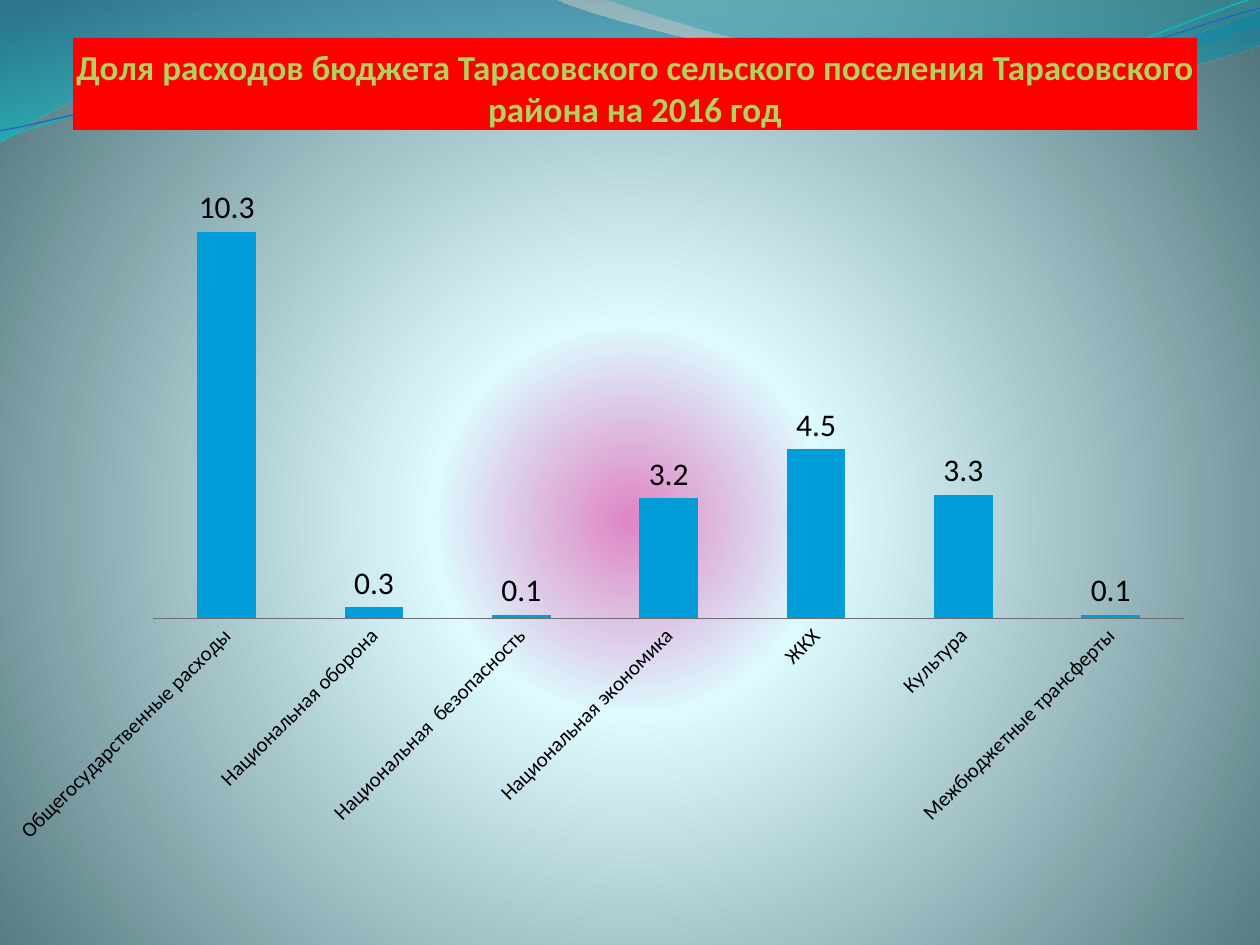
from lxml import etree
from pptx import Presentation
from pptx.chart.data import CategoryChartData
from pptx.dml.color import RGBColor
from pptx.enum import chart as ch, text
from pptx.oxml.ns import qn
from pptx.util import Emu, Pt

PX = 914400 / 126
THEME = dict(
    font="Calibri", title_size=Pt(20), label_size=Pt(18), cat_size=Pt(12),
    banner=RGBColor(255, 0, 0), bar=RGBColor(0, 157, 217),
    ink=RGBColor(0, 0, 0), axis=RGBColor(110, 110, 110),
    backdrop=[(0, "DE86C5", 100), (25, "DDFAFF", 100), (100, "52767C", 100)],
    title=[(0, "B5D267", 100), (25, "B2D15D", 100), (50, "A0BE40", 100),
           (75, "B2D15D", 100), (100, "B5D267", 100)],
)


def gradient(fill, owner, stops, focus=None):
    fill.gradient()
    grad = next(owner.iter(qn("a:gradFill")))
    for child in list(grad):
        grad.remove(child)
    gs_list = etree.SubElement(grad, qn("a:gsLst"))
    for pos, color, opacity in stops:
        gs = etree.SubElement(gs_list, qn("a:gs"), pos=str(pos * 1000))
        clr = etree.SubElement(gs, qn("a:srgbClr"), val=color)
        if opacity < 100:
            etree.SubElement(clr, qn("a:alpha"), val=str(opacity * 1000))
    if focus:
        circle = etree.SubElement(grad, qn("a:path"), path="circle")
        etree.SubElement(circle, qn("a:fillToRect"),
                         {side: str(v * 1000) for side, v in zip("ltrb", focus)})
    else:
        etree.SubElement(grad, qn("a:lin"), ang="5400000", scaled="0")


def curve(shapes, start, segments, close):
    ends = [seg[-2:] for seg in segments]
    left, top = (min(axis) for axis in zip(start, *ends))
    fb = shapes.build_freeform(*start, scale=PX)
    fb.add_line_segments(ends, close=close)
    sp = fb.convert_to_shape()
    sp.shadow.inherit = False
    for line, seg in zip(list(sp.element.iter(qn("a:lnTo"))), segments):
        if len(seg) == 6:
            bezier = etree.Element(qn("a:cubicBezTo"))
            for x, y in zip(seg[::2], seg[1::2]):
                etree.SubElement(bezier, qn("a:pt"), x=str(x - left), y=str(y - top))
            line.getparent().replace(line, bezier)
    return sp


prs = Presentation()
prs.slide_width, prs.slide_height = Emu(round(1260 * PX)), Emu(round(945 * PX))
slide = prs.slides.add_slide(prs.slide_layouts[5])
shapes = slide.shapes
gradient(slide.background.fill, slide.element, THEME["backdrop"], (10, 110, 10, 100))

waves = [
    ((0, 0), [(554, -1), (600, 21, 837, 79, 955, 79), (1075, 79, 1207, 33, 1260, 11),
              (1261, 45), (1239, 55, 1096, 96, 940, 95), (784, 95, 481, 35, 324, 43),
              (161, 45, 58, 105, -1, 142)],
     [(0, "0074A1", 45), (100, "00C6CF", 55)]),
    ((604, -1), [(641, 14, 859, 78, 969, 82), (1083, 87, 1211, 40, 1260, 26), (1260, 0)],
     [(0, "00A1A9", 30), (80, "008BBF", 45)]),
]
for start, segments, stops in waves:
    sp = curve(shapes, start, segments, True)
    gradient(sp.fill, sp.element, stops)
    sp.line.fill.background()

strands = [
    ((-2, 110), [(58, 90, 200, 52, 350, 53), (492, 53, 745, 118, 896, 114),
                 (1049, 109, 1184, 45, 1260, 27)], "0AB8BF", 0.85),
    ((-2, 101), [(57, 94, 207, 57, 357, 58), (509, 58, 750, 112, 902, 108),
                 (1052, 104, 1189, 52, 1262, 38)], "0F6FC6", 0.75),
]
for start, segments, color, width in strands:
    sp = curve(shapes, start, segments, False)
    sp.rotation = 357.3
    sp.fill.background()
    sp.line.color.rgb = RGBColor.from_string(color)
    sp.line.width = Pt(width)

title = shapes.title
shapes.element.append(title.element)
for name, v in dict(left=73, top=38, width=1124, height=92).items():
    setattr(title, name, Emu(round(v * PX)))
title.fill.solid()
title.fill.fore_color.rgb = THEME["banner"]
tf = title.text_frame
for name, v in dict(margin_left=0, margin_right=0, margin_top=Pt(3.6), margin_bottom=0,
                    word_wrap=True, auto_size=text.MSO_AUTO_SIZE.NONE,
                    vertical_anchor=text.MSO_ANCHOR.BOTTOM).items():
    setattr(tf, name, v)
p = tf.paragraphs[0]
p.alignment = text.PP_ALIGN.CENTER
r = p.add_run()
r.text = "Доля расходов бюджета Тарасовского сельского поселения Тарасовского района на 2016 год"
for name, v in dict(name=THEME["font"], size=THEME["title_size"], bold=True).items():
    setattr(r.font, name, v)
gradient(r.font.fill, p._p, THEME["title"])

data = CategoryChartData(number_format="0.0")
data.categories = ["Общегосударственные расходы", "Национальная оборона",
                   "Национальная  безопасность", "Национальная экономика",
                   "ЖКХ", "Культура", "Межбюджетные трансферты"]
data.add_series("Series 1", [10.3, 0.3, 0.1, 3.2, 4.5, 3.3, 0.1])
box = [Emu(round(v * PX)) for v in (0, 147, 1205, 798)]
chart = shapes.add_chart(ch.XL_CHART_TYPE.COLUMN_CLUSTERED, *box, data).chart
chart.has_legend = chart.has_title = False
for name, v in dict(name=THEME["font"], size=THEME["label_size"]).items():
    setattr(chart.font, name, v)
chart.font.color.rgb = THEME["ink"]

plot = chart.plots[0]
for name, v in dict(gap_width=150, vary_by_categories=False, has_data_labels=True).items():
    setattr(plot, name, v)
for name, v in dict(show_value=True, number_format="0.0", number_format_is_linked=False,
                    position=ch.XL_LABEL_POSITION.OUTSIDE_END).items():
    setattr(plot.data_labels, name, v)
bars = plot.series[0].format.fill
bars.solid()
bars.fore_color.rgb = THEME["bar"]

for name, v in dict(minimum_scale=0, maximum_scale=12, has_major_gridlines=False,
                    visible=False).items():
    setattr(chart.value_axis, name, v)
cat = chart.category_axis
cat.major_tick_mark = ch.XL_TICK_MARK.NONE
cat.format.line.color.rgb = THEME["axis"]
cat.tick_labels.font.size = THEME["cat_size"]

area = next(chart._chartSpace.iter(qn("c:plotArea")))
for old in area.findall(qn("c:layout")):
    area.remove(old)
layout = etree.Element(qn("c:layout"))
area.insert(0, layout)
manual = etree.SubElement(layout, qn("c:manualLayout"))
for tag, v in dict(layoutTarget="inner", xMode="edge", yMode="edge",
                   x=0.127, y=0.026, w=0.856, h=0.565).items():
    etree.SubElement(manual, qn("c:" + tag), val=str(v))

prs.save("out.pptx")
